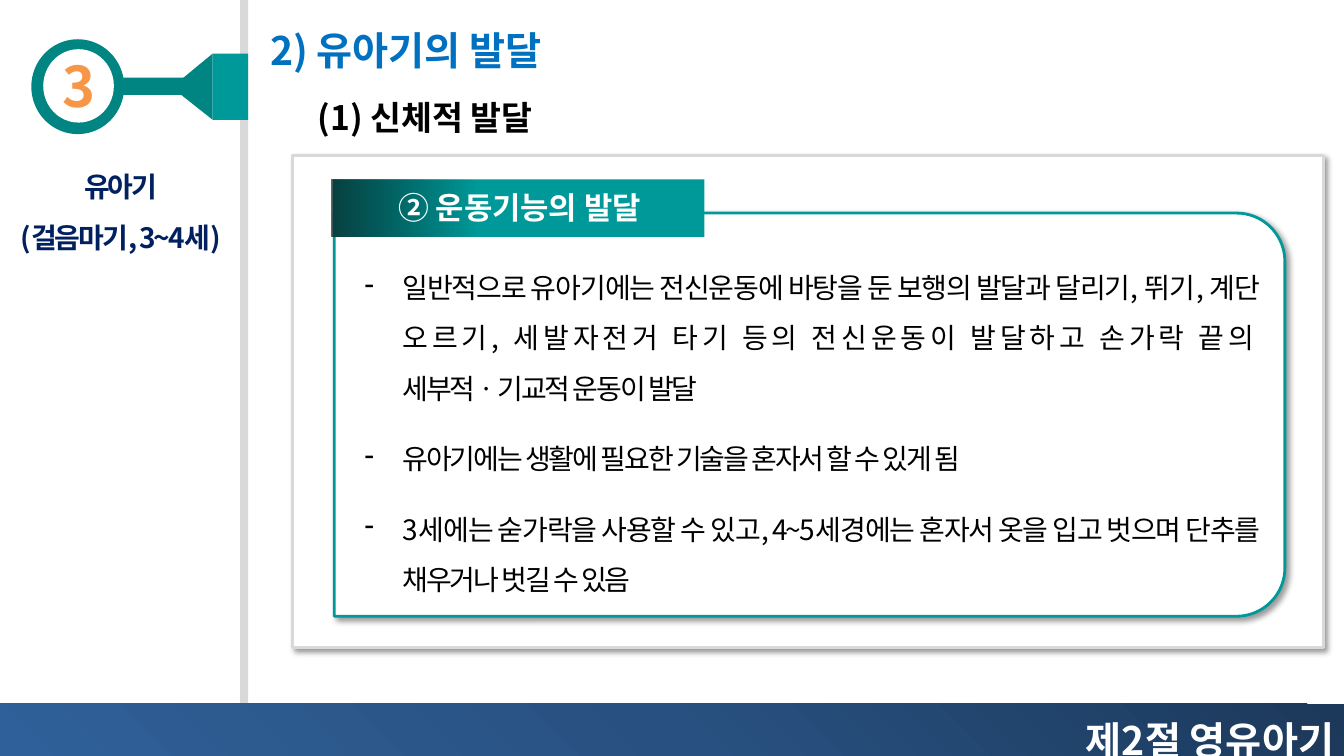
import pptx
import pptx.util
import pptx.dml.color
import pptx.enum.shapes
import pptx.enum.text
import pptx.oxml
import pptx.oxml.ns
from dataclasses import dataclass

# Content
CHAPTER = "3"
TITLE = "2) 유아기의 발달"
SUBTITLE = "(1) 신체적 발달"
SIDE_LINES = ["유아기", "(걸음마기, 3~4세)"]
LABEL = "② 운동기능의 발달"
FOOTER = "제2절 영유아기"
# Each bullet is a list of (text, letter spacing in points); "\v" breaks the line
TIGHT = -1.5
BULLETS = [
    [("일반적으로 유아기에는 전신운동에 바탕을 둔 보행의 발달과 달리기, 뛰기, 계단 ", TIGHT),
     ("오르기, 세발자전거 타기 등의 전신운동이 발달하고 손가락 끝의", 0),
     ("\v", 0),
     ("세부적ㆍ기교적 운동이 발달", TIGHT)],
    [("유아기에는 생활에 필요한 기술을 혼자서 할 수 있게 됨", TIGHT)],
    [("3세에는 숟가락을 사용할 수 있고, 4~5세경에는 혼자서 옷을 입고 벗으며 "
      "단추를 채우거나 벗길 수 있음", TIGHT)],
]


@dataclass(frozen=True)
class Theme:
    font: str = "Noto Sans CJK KR"
    white: str = "FFFFFF"
    black: str = "000000"
    gray: str = "D9D9D9"
    teal: str = "009999"
    dark_teal: str = "008582"
    orange: str = "F79646"
    navy: str = "002060"
    blue: str = "0070C0"
    footer_stops: tuple = ((0, "1C395B", 100), (50, "285181", 100), (100, "306099", 100))
    shade_stops: tuple = ((0, "0D0D0D", 64), (100, "000000", 0))
    number_size: int = 40
    title_size: int = 28
    subtitle_size: int = 24
    label_size: int = 22
    body_size: int = 20


THEME = Theme()
SHAPE = pptx.enum.shapes.MSO_SHAPE
ALIGN = pptx.enum.text.PP_ALIGN
Cm, Pt = pptx.util.Cm, pptx.util.Pt
NAMESPACE = pptx.oxml.ns.nsdecls("a")


def color(value):
    return pptx.dml.color.RGBColor.from_string(value)


def paint(shape, fill, line=None):
    shape.shadow.inherit = False
    shape.fill.solid()
    shape.fill.fore_color.rgb = color(fill)
    if line:
        shape.line.color.rgb = color(line)
        shape.line.width = Pt(2)
    else:
        shape.line.fill.background()
    return shape


def add_block(page, kind, place, fill, line=None):
    return paint(page.shapes.add_shape(kind, *map(Cm, place)), fill, line)


def set_gradient(shape, stops, angle):
    marks = "".join(
        f'<a:gs pos="{at * 1000}"><a:srgbClr val="{value}">'
        f'<a:alpha val="{alpha * 1000}"/></a:srgbClr></a:gs>' for at, value, alpha in stops)
    gradient = pptx.oxml.parse_xml(
        f'<a:gradFill {NAMESPACE} rotWithShape="1"><a:gsLst>{marks}</a:gsLst>'
        f'<a:lin ang="{angle * 60000}" scaled="0"/></a:gradFill>')
    properties = shape.element.spPr
    solid = properties.find(pptx.oxml.ns.qn("a:solidFill"))
    properties.replace(solid, gradient)


def set_shadow(shape):
    effects = shape.element.spPr.find(pptx.oxml.ns.qn("a:effectLst"))
    effects.append(pptx.oxml.parse_xml(
        f'<a:outerShdw {NAMESPACE} blurRad="{Pt(4)}" dist="{Pt(3)}" dir="2700000" '
        f'algn="tl" rotWithShape="0"><a:srgbClr val="{THEME.black}">'
        f'<a:alpha val="40000"/></a:srgbClr></a:outerShdw>'))


def add_span(para, text, size, value, bold=True, spacing=0):
    span = para.add_run()
    span.text = text
    span.font.size = Pt(size)
    span.font.bold = bold
    span.font.color.rgb = color(value)
    span.font.name = THEME.font
    properties = span.font._element
    properties.append(pptx.oxml.parse_xml(f'<a:ea {NAMESPACE} typeface="{THEME.font}"/>'))
    if spacing:
        properties.set("spc", str(round(spacing * 100)))


def prepare(box, wrap):
    frame = box.text_frame
    frame.word_wrap = wrap
    frame.auto_size = pptx.enum.text.MSO_AUTO_SIZE.NONE
    frame.vertical_anchor = pptx.enum.text.MSO_ANCHOR.TOP
    return frame


def add_text(page, place, lines, size, value, align=ALIGN.LEFT, wrap=False,
             leading=None, spacing=0):
    frame = prepare(page.shapes.add_textbox(*map(Cm, place)), wrap)
    for index, line in enumerate(lines):
        para = frame.add_paragraph() if index else frame.paragraphs[0]
        para.alignment = align
        para.line_spacing = leading
        add_span(para, line, size, value, spacing=spacing)


def add_side(page):
    # Rail and chapter badge
    add_block(page, SHAPE.RECTANGLE, (6.05, 0, 0.2, 17.93), THEME.gray)
    add_block(page, SHAPE.OVAL, (0.79, 0.99, 2.34, 2.39), THEME.dark_teal)
    add_block(page, SHAPE.OVAL, (1.09, 1.24, 1.78, 1.85), THEME.white)
    funnel = [(4.5, 2.06), (5.36, 1.35), (5.36, 3.02), (4.5, 2.34)]
    corners = [(Cm(x), Cm(y)) for x, y in funnel]
    outline = page.shapes.build_freeform(*corners[0])
    outline.add_line_segments(corners[1:], close=True)
    paint(outline.convert_to_shape(), THEME.dark_teal)
    add_block(page, SHAPE.RECTANGLE, (5.36, 1.35, 0.89, 1.67), THEME.teal)
    add_block(page, SHAPE.RECTANGLE, (2.97, 1.96, 1.96, 0.43), THEME.dark_teal)
    add_text(page, (1.32, 1.17, 1.35, 1.96), [CHAPTER], THEME.number_size,
             THEME.orange, ALIGN.CENTER)
    add_text(page, (-0.03, 3.73, 6.15, 2.67), SIDE_LINES, THEME.body_size,
             THEME.navy, ALIGN.CENTER, True, 1.5, TIGHT)


def add_footer(page):
    band = add_block(page, SHAPE.RECTANGLE, (0, 17.73, 33.86, 1.4), THEME.footer_stops[0][1])
    set_gradient(band, THEME.footer_stops, 135)
    add_text(page, (16.33, 17.32, 17.53, 2.06), [FOOTER], THEME.title_size,
             THEME.white, ALIGN.RIGHT, True, 1.5)


def add_headings(page):
    title = page.shapes.title
    title.left, title.top, title.width, title.height = map(Cm, (6.55, 0.53, 8.13, 1.45))
    para = prepare(title, False).paragraphs[0]
    para.alignment = ALIGN.LEFT
    add_span(para, TITLE, THEME.title_size, THEME.blue)
    add_text(page, (7.75, 2.31, 6.5, 1.27), [SUBTITLE], THEME.subtitle_size, THEME.black)


def add_panel(page):
    set_shadow(add_block(page, SHAPE.RECTANGLE, (7.37, 3.91, 25.98, 12.4),
                         THEME.white, THEME.gray))
    # Frame turned a quarter, so its rounded end faces right
    left, top, width, height = 8.42, 5.37, 23.95, 10.16
    shift = (width - height) / 2
    frame = add_block(page, SHAPE.ROUND_2_SAME_RECTANGLE,
                      (left + shift, top - shift, height, width), THEME.white, THEME.teal)
    frame.rotation = 90
    frame.adjustments[0] = 0.12
    set_shadow(frame)
    # Label
    add_block(page, SHAPE.RECTANGLE, (8.38, 4.52, 9.37, 1.45), THEME.teal)
    shade = add_block(page, SHAPE.RECTANGLE, (8.36, 4.52, 3.68, 1.45), THEME.black)
    set_gradient(shade, THEME.shade_stops, 0)
    add_text(page, (9.78, 4.62, 7.34, 1.19), [LABEL], THEME.label_size, THEME.white)


def add_bullets(page):
    frame = prepare(page.shapes.add_textbox(*map(Cm, (8.94, 6.27, 23.01, 8.97))), True)
    for index, parts in enumerate(BULLETS):
        para = frame.add_paragraph() if index else frame.paragraphs[0]
        properties = para._p.get_or_add_pPr()
        properties.set("marL", str(Cm(0.95)))
        properties.set("indent", str(-Cm(0.95)))
        properties.append(pptx.oxml.parse_xml(f'<a:buChar {NAMESPACE} char="-"/>'))
        para.alignment = ALIGN.JUSTIFY
        para.line_spacing = 1.5
        if index:
            para.space_before = Pt(14.4)
        for text, spacing in parts:
            if text == "\v":
                para.add_line_break()
            else:
                add_span(para, text, THEME.body_size, THEME.black, False, spacing)


def main():
    deck = pptx.Presentation()
    deck.slide_width, deck.slide_height = Cm(33.86), Cm(19.05)
    page = deck.slides.add_slide(deck.slide_layouts[5])
    add_side(page)
    add_footer(page)
    add_headings(page)
    add_panel(page)
    add_bullets(page)
    deck.save("out.pptx")


if __name__ == "__main__":
    main()
